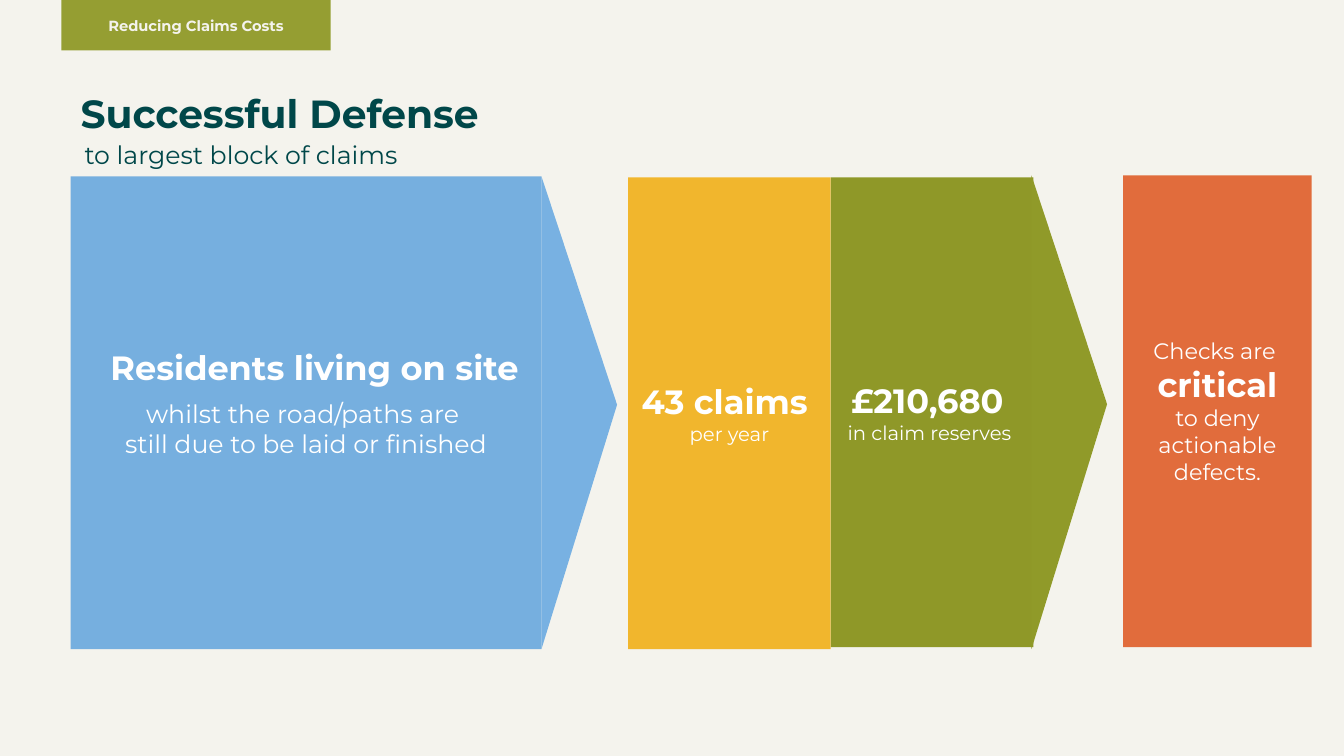
from lxml import etree
from pptx import Presentation
from pptx.dml.color import RGBColor
from pptx.enum.shapes import MSO_SHAPE
from pptx.enum.text import MSO_ANCHOR, MSO_AUTO_SIZE, PP_ALIGN
from pptx.oxml.ns import qn
from pptx.util import Inches, Pt

RECTANGLE, TRIANGLE = MSO_SHAPE.RECTANGLE, MSO_SHAPE.ISOSCELES_TRIANGLE
TOP, MIDDLE = MSO_ANCHOR.TOP, MSO_ANCHOR.MIDDLE
LEFT, CENTER = PP_ALIGN.LEFT, PP_ALIGN.CENTER
GROW = MSO_AUTO_SIZE.SHAPE_TO_FIT_TEXT

CREAM = RGBColor(0xF4, 0xF3, 0xED)
WHITE = RGBColor(0xFF, 0xFF, 0xFF)
TEAL = RGBColor(0x00, 0x47, 0x49)
BLUE = RGBColor(0x70, 0xAC, 0xDF)
BLUE_TIP = RGBColor(0x78, 0xB1, 0xE2)
YELLOW = RGBColor(0xF1, 0xB3, 0x23)
GREEN = RGBColor(0x8A, 0x94, 0x1E)
GREEN_TIP = RGBColor(0x90, 0x9A, 0x29)
ORANGE = RGBColor(0xE0, 0x65, 0x33)

FONT = "Montserrat"
PANEL_OPACITY = 95
TIP_LENGTH = 0.75
TIP_POINT = 0.483


def place(shape, box):
    for name, value in zip(("left", "top", "width", "height"), box):
        setattr(shape, name, Inches(value))


def write(shape, lines, color, align=CENTER, anchor=MIDDLE):
    """Fill a shape with (text, size, bold) lines, one paragraph each."""
    frame = shape.text_frame
    frame.word_wrap = True
    frame.vertical_anchor = anchor
    for index, (text, size, bold) in enumerate(lines):
        para = frame.add_paragraph() if index else frame.paragraphs[0]
        para.alignment = align
        span = para.add_run()
        span.text = text
        span.font.color.rgb = color
        looks = {"name": FONT, "size": Pt(size), "bold": bold}
        for name, value in looks.items():
            setattr(span.font, name, value)


def add_plain_shape(page, kind, box, color):
    shape = page.shapes.add_shape(kind, *map(Inches, box))
    shape.shadow.inherit = False
    shape.fill.solid()
    shape.fill.fore_color.rgb = color
    shape.line.fill.background()
    return shape


def add_panel(page, box, color, lines, text_color=WHITE):
    """Add a slightly see-through rectangle with centred text."""
    panel = add_plain_shape(page, RECTANGLE, box, color)
    tint = panel.element.spPr.find(qn("a:solidFill"))[0]
    etree.SubElement(tint, qn("a:alpha"), val=str(PANEL_OPACITY * 1000))
    write(panel, lines, text_color)
    return panel


def add_tip(page, left, top, height, color):
    """Add a right-pointing triangle whose base starts at left."""
    shift = (height - TIP_LENGTH) / 2
    box = (left - shift, top + shift, height, TIP_LENGTH)
    tip = add_plain_shape(page, TRIANGLE, box, color)
    tip.adjustments[0] = TIP_POINT
    tip.rotation = 90


def add_label(page, box, lines, color, align):
    label = page.shapes.add_textbox(*map(Inches, box))
    write(label, lines, color, align, TOP)
    label.text_frame.auto_size = GROW


def add_heading(page, left, top, width):
    title = page.shapes.title
    place(title, (left, top, width, 0.57))
    write(title, [("Successful Defense", 28, True)], TEAL, LEFT, TOP)
    title.text_frame.auto_size = GROW
    add_label(page, (left + 0.04, top + 0.49, width, 0.4),
              [("to largest block of claims", 18, False)], TEAL, LEFT)


def add_residents_arrow(page, left, top, width, height):
    body = add_panel(page, (left, top, width, height), BLUE,
                     [("whilst the road/paths are ", 18, False),
                      ("still due to be laid or finished", 18, False)])
    body.text_frame.margin_top = Inches(0.36)
    add_tip(page, left + width, top, height, BLUE_TIP)
    add_label(page, (left + 0.21, top + 1.64, 4.42, 0.5),
              [("Residents living on site", 24, True)], WHITE, CENTER)


def add_claims_arrow(page, left, top, width, height):
    half = width / 2
    add_panel(page, (left, top, half, height), YELLOW,
              [("43 claims ", 24, True), ("per year", 14, False)])
    add_panel(page, (left + half, top, half, height - 0.02), GREEN,
              [("£210,680 ", 24, True), ("in claim reserves ", 14, False)])
    add_tip(page, left + width - 0.02, top - 0.02, height + 0.02, GREEN_TIP)


def main():
    deck = Presentation()
    deck.slide_width, deck.slide_height = Inches(13.33), Inches(7.5)
    page = deck.slides.add_slide(deck.slide_layouts[5])
    page.background.fill.solid()
    page.background.fill.fore_color.rgb = CREAM

    add_panel(page, (0.61, 0, 2.67, 0.5), GREEN_TIP,
              [("Reducing Claims Costs", 10.5, True)], CREAM)
    add_heading(page, 0.7, 0.84, 6.67)
    add_residents_arrow(page, 0.7, 1.75, 4.67, 4.69)
    add_claims_arrow(page, 6.23, 1.76, 4.02, 4.68)
    add_panel(page, (11.14, 1.74, 1.87, 4.68), ORANGE,
              [("Checks are ", 16, False), ("critical", 24, True),
               ("to deny actionable defects.", 16, False)])
    deck.save("out.pptx")


if __name__ == "__main__":
    main()
